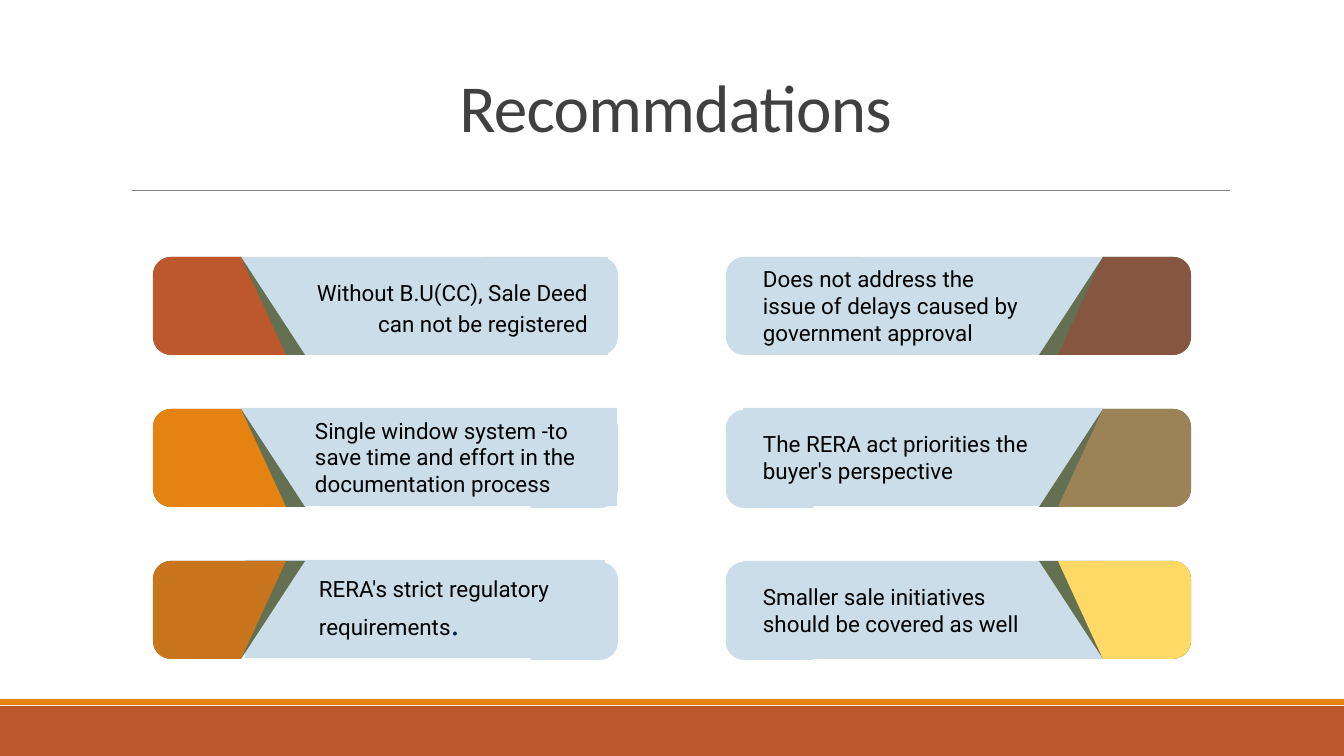
from math import cos, pi, sin

from lxml.etree import SubElement
from pptx import Presentation
from pptx.dml.color import RGBColor
from pptx.enum.shapes import MSO_CONNECTOR, MSO_SHAPE
from pptx.enum.text import MSO_ANCHOR, PP_ALIGN
from pptx.oxml.ns import qn
from pptx.util import Pt

WIDTH, HEIGHT = 1344, 756
COLORS = {
    "rust": "BD582C", "orange": "E48312", "ochre": "C9751D",
    "brown": "865640", "khaki": "9B8357", "yellow": "FFD966",
    "panel": "CCDDEA", "fold": "637052", "rule": "808080",
    "title": "404040", "text": "000000", "dot": "001F5F",
}
TITLE = "Recommdations"
BARS = [("rust", 706, 50), ("orange", 699, 6)]

# side, row, tab colour, text box (left, top, width), text
CARDS = [
    ("left", 0, "rust", (241, 257, 367), "Without B.U(CC), Sale Deed can not be registered"),
    ("left", 1, "orange", (241, 408, 376),
     "Single window system -to save time and effort in the documentation process"),
    ("right", 0, "brown", (743, 257, 360),
     "Does not address the issue of delays caused by government approval"),
    ("right", 1, "khaki", (743, 408, 360), "The RERA act priorities the buyer's perspective"),
    ("right", 2, "yellow", (743, 561, 360), "Smaller sale initiatives should be covered as well"),
    ("left", 2, "ochre", (245, 560, 360), "RERA's strict regulatory requirements"),
]
FIRST_TOP, ROW_STEP, CARD_HEIGHT, RADIUS = 257, 152, 98, 18
TAB_EDGE, TAB_NEAR, TAB_FAR, FOLD_FAR = 153, 241, 286, 305
CAP_EDGE, CAP_NEAR, CAP_FAR = 618, 484, 531
INSET_TAB, INSET_END, INSET = 74, 20, 13


def px(value):
    return round(value * 914400 / 134.4)


def color(name):
    return RGBColor.from_string(COLORS[name])


def paint(shape, fill):
    shape.shadow.inherit = False
    shape.fill.solid()
    shape.fill.fore_color.rgb = color(fill)
    shape.line.fill.background()


def add_bar(page, left, top, width, height, fill):
    bar = page.shapes.add_shape(MSO_SHAPE.RECTANGLE, px(left), px(top), px(width), px(height))
    paint(bar, fill)
    return bar


def add_slanted(page, side, top, edge, upper, lower, fill):
    """Draw a block with two round corners at edge and a slant from upper to lower."""
    inward = 1 if upper > edge else -1
    center = edge + inward * RADIUS
    points = [(upper, top)]
    for center_y, start in ((top + RADIUS, pi / 2), (top + CARD_HEIGHT - RADIUS, 0)):
        for step in range(9):
            angle = start - step * pi / 16
            points.append((center - inward * RADIUS * cos(angle),
                           center_y - RADIUS * sin(angle)))
    points.append((lower, top + CARD_HEIGHT))
    if side == "right":
        points = [(WIDTH - x, y) for x, y in points]
    points = [(px(x), px(y)) for x, y in points]
    builder = page.shapes.build_freeform(*points[0], scale=1.0)
    builder.add_line_segments(points[1:], close=True)
    paint(builder.convert_to_shape(), fill)


def set_insets(frame, left, right):
    frame.word_wrap = True
    frame.vertical_anchor = MSO_ANCHOR.MIDDLE
    frame.margin_left, frame.margin_right = px(left), px(right)
    frame.margin_top = frame.margin_bottom = px(INSET)


def style(span, font, size, fill):
    span.font.name = font
    span.font.size = Pt(size)
    span.font.color.rgb = color(fill)


def add_card_text(page, side, row, place, text):
    left, top, width = place
    box = add_bar(page, left, top, width, CARD_HEIGHT, "panel")
    insets = (INSET_TAB, INSET_END) if side == "left" else (INSET_END, INSET_TAB)
    set_insets(box.text_frame, *insets)
    para = box.text_frame.paragraphs[0]
    para.text = text
    para.alignment = PP_ALIGN.LEFT
    style(para.runs[0], "Roboto", 12, "text")
    if (side, row) == ("left", 0):
        para.alignment = PP_ALIGN.RIGHT
        para.line_spacing = 1.15
    if (side, row) == ("left", 2):
        dot = para.add_run()
        dot.text = "."
        style(dot, "Times New Roman", 18, "dot")


def add_title(page):
    box = page.shapes.add_textbox(px(121), px(32), px(1109), px(160))
    set_insets(box.text_frame, INSET, INSET)
    para = box.text_frame.paragraphs[0]
    para.text = TITLE
    para.alignment = PP_ALIGN.CENTER
    para.line_spacing = 0.85
    style(para.runs[0], "Calibri", 36, "title")
    para.runs[0]._r.get_or_add_rPr().set("spc", "-40")


def main():
    deck = Presentation()
    deck.slide_width, deck.slide_height = px(WIDTH), px(HEIGHT)
    page = deck.slides.add_slide(deck.slide_layouts[6])

    for fill, top, height in BARS:
        add_bar(page, 0, top, WIDTH, height, fill)
    rule = page.shapes.add_connector(MSO_CONNECTOR.STRAIGHT, px(132), px(191), px(1230), px(191))
    rule.line.color.rgb = color("rule")
    rule.line.width = Pt(0.5)
    SubElement(rule._element.spPr, qn("a:effectLst"))

    tops = [FIRST_TOP + row * ROW_STEP for row in range(3)]
    for side, row, *_ in CARDS:
        add_slanted(page, side, tops[row] + min(row, 1), CAP_EDGE, CAP_NEAR, CAP_FAR, "panel")
    for side, row, _, place, text in CARDS:
        add_card_text(page, side, row, place, text)
    add_title(page)
    for side, row, fill, *_ in CARDS:
        for far, shade in ((FOLD_FAR, "fold"), (TAB_FAR, fill)):
            upper, lower = (far, TAB_NEAR) if row == 2 else (TAB_NEAR, far)
            add_slanted(page, side, tops[row], TAB_EDGE, upper, lower, shade)

    deck.save("out.pptx")


if __name__ == "__main__":
    main()
